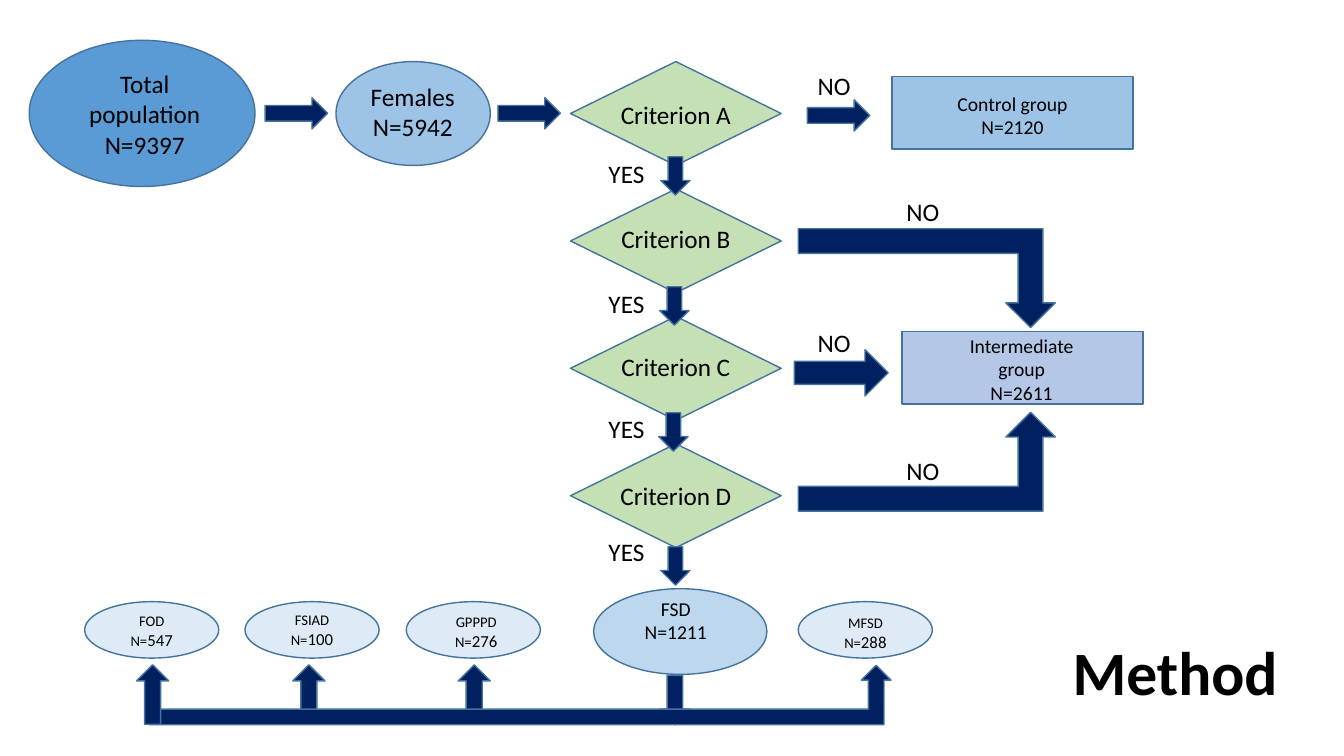
from pptx import Presentation
from pptx.dml.color import RGBColor
from pptx.enum.shapes import MSO_SHAPE
from pptx.enum.text import MSO_ANCHOR, MSO_AUTO_SIZE, PP_ALIGN
from pptx.util import Pt

NAVY = "002060"
GREEN = "C5E0B4"
SKY = "9DC3E6"
PALE = "DEEBF7"
ARROW = MSO_SHAPE.RIGHT_ARROW
BENT = MSO_SHAPE.BENT_UP_ARROW
OVAL = MSO_SHAPE.OVAL

deck = Presentation()
deck.slide_width = Pt(960)
deck.slide_height = Pt(540)
page = deck.slides.add_slide(deck.slide_layouts[5])


def add_figure(kind, left, top, width, height, fill, rotation=0):
    figure = page.shapes.add_shape(kind, Pt(left), Pt(top), Pt(width), Pt(height))
    figure.shadow.inherit = False
    figure.fill.solid()
    figure.fill.fore_color.rgb = RGBColor.from_string(fill)
    figure.line.color.rgb = RGBColor.from_string("43739E")
    figure.line.width = Pt(1)
    figure.rotation = rotation
    return figure


def add_label(lines, left, top, width, height):
    box = page.shapes.add_textbox(Pt(left), Pt(top), Pt(width), Pt(height))
    frame = box.text_frame
    frame.word_wrap = True
    frame.auto_size = MSO_AUTO_SIZE.SHAPE_TO_FIT_TEXT
    for index, line in enumerate(lines):
        para = frame.paragraphs[0] if index == 0 else frame.add_paragraph()
        para.alignment = PP_ALIGN.CENTER
        for text, size in line:
            span = para.add_run()
            span.text = text
            span.font.name = "Calibri"
            span.font.size = Pt(size)
            span.font.color.rgb = RGBColor.from_string("000000")


for left in (199.4, 317.5):
    add_figure(ARROW, left, 484.6, 42.5, 23, NAVY, 270)
add_figure(ARROW, 464.4, 488.9, 35.3, 22.3, NAVY, 90)

add_figure(OVAL, 20.9, 28.8, 161.3, 104.4, "5B9BD5")
add_figure(OVAL, 240, 44, 110.2, 74.2, SKY)
for left in (189.4, 355.7):
    add_figure(ARROW, left, 69.8, 44.6, 22.3, NAVY)

for row in range(4):
    add_figure(MSO_SHAPE.FLOWCHART_DECISION, 407.5, 44 + 91 * row, 150.5, 74.2, GREEN)

add_figure(OVAL, 424, 420.5, 123.8, 61.2, "BDD7EE")
for left in (60.5, 175, 290.2, 570.2):
    add_figure(OVAL, left, 429.8, 95.8, 40.3, PALE)
add_figure(MSO_SHAPE.RECTANGLE, 637.2, 54.7, 172.1, 51.8, SKY)
add_figure(MSO_SHAPE.RECTANGLE, 644.4, 236.9, 172.1, 51.8, "B4C7E7")

add_figure(ARROW, 576.7, 71.3, 44.6, 22.3, NAVY)
add_figure(BENT, 570.2, 294.5, 183.6, 70.6, NAVY)
bend_down = add_figure(BENT, 570.2, 163.4, 183.6, 70.6, NAVY)
bend_down._element.spPr.xfrm.set("flipV", "1")
add_figure(ARROW, 567.4, 249.8, 67, 33.1, NAVY)
for left, top in ((468.7, 115.2), (468, 208.1), (467.3, 298.1), (468.7, 393.8)):
    add_figure(ARROW, left, top, 27.4, 20.9, NAVY, 90)

subtype_bar = add_figure(BENT, 106.6, 475.2, 529.9, 42.5, NAVY)
subtype_bar.adjustments[0] = 0.262
add_figure(ARROW, 87.8, 484.6, 42.5, 23, NAVY, 270)

groups = [
    ("FSD", "N=1211", 14, 428.4, 422.6, 41),
    ("Females", "N=5942", 18, 240.5, 54.7, 51.1),
    ("Total population", "N=9397", 18, 49, 45.4, 72.7),
    ("Intermediate group", "N=2611", 14, 675.4, 234.7, 58.3),
    ("Control group", "N=2120", 14, 668.9, 61.9, 41),
]
for name, count, size, left, top, height in groups:
    add_label([[(name, size)], [(count, size)]], left, top, 108.7, height)

for letter, top in zip("ABCD", (67.7, 156.2, 247.7, 339.8)):
    add_label([[(f"Criterion {letter}", 18)]], 428.4, top, 108.7, 28.8)

answers = [
    ("NO", 563, 46.8), ("NO", 626.4, 136.8),
    ("NO", 563, 230.4), ("NO", 626.4, 321.8),
    ("YES", 414.7, 109.4), ("YES", 414.7, 202.3),
    ("YES", 414.7, 291.6), ("YES", 414.7, 379.4),
]
for answer, left, top in answers:
    add_label([[(answer, 18)]], left, top, 65.5, 28.8)

subtypes = [
    ("FOD", "547", 54, 433.4),
    ("FSIAD", "100", 168.5, 432.7),
    ("GPPPD", "276", 285.8, 434.2),
    ("MFSD", "288", 563.8, 434.9),
]
for name, count, left, top in subtypes:
    add_label([[(name, 10.5)], [("N=", 10.5), (count, 12)]], left, top, 108.7, 34.6)

title = page.shapes.title
title.left, title.top, title.width, title.height = Pt(758.9), Pt(439.9), Pt(178.6), Pt(85)
title.text_frame.vertical_anchor = MSO_ANCHOR.MIDDLE
title.text_frame.word_wrap = True
para = title.text_frame.paragraphs[0]
para.alignment = PP_ALIGN.LEFT
para.line_spacing = 0.9
span = para.add_run()
span.text = "Method"
span.font.name = "Calibri"
span.font.size = Pt(44)
span.font.bold = True
span.font.color.rgb = RGBColor.from_string("000000")

deck.save("out.pptx")
